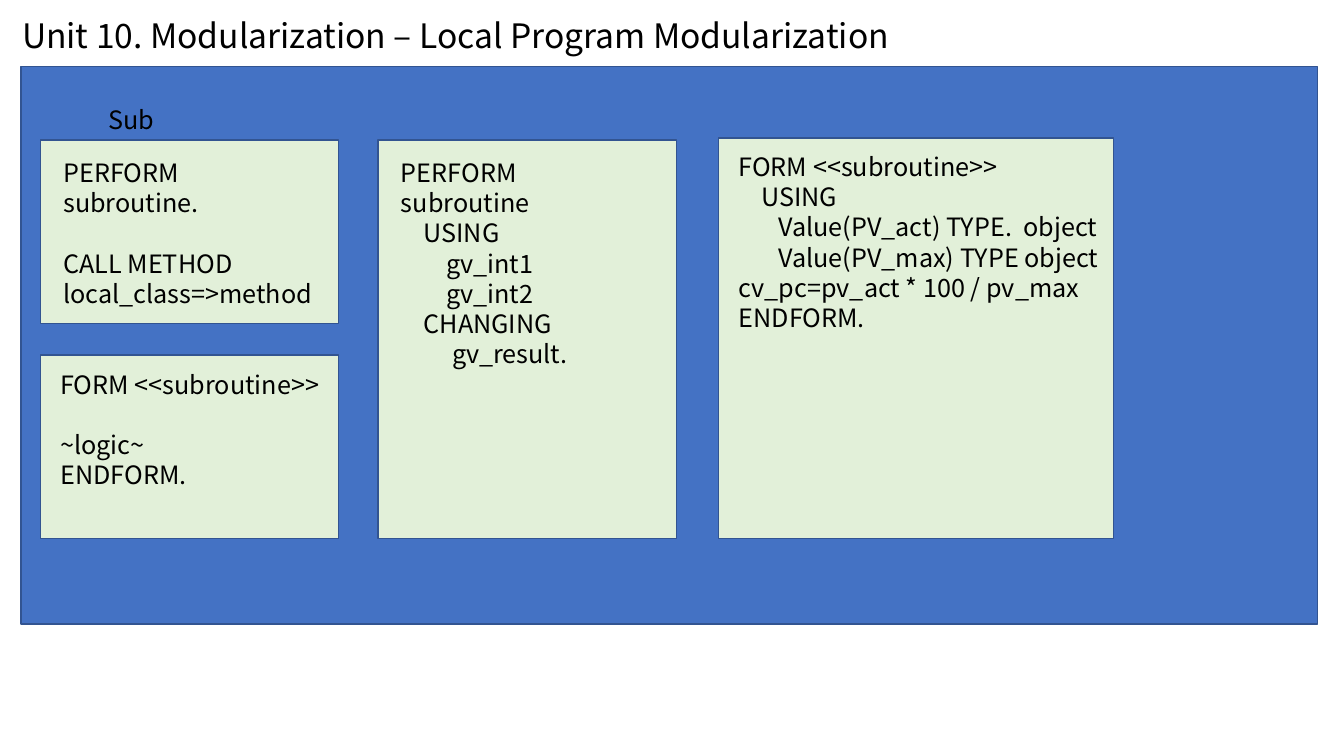
"""Build the slide on local program modularization with subroutines."""
from pptx import Presentation
from pptx.dml.color import RGBColor
from pptx.enum.shapes import MSO_SHAPE
from pptx.enum.text import MSO_ANCHOR as Anchor, MSO_AUTO_SIZE as AutoSize, PP_ALIGN as Align
from pptx.util import Pt

THEME = {
    "font": "Noto Sans CJK KR",
    "text": RGBColor.from_string("000000"),
    "panel": RGBColor.from_string("4472C4"),
    "card": RGBColor.from_string("E2F0D9"),
    "outline": RGBColor.from_string("325491"),
    "title_size": 24,
    "body_size": 18,
    "line_gap": 21.6,
    "indent_unit": 4.05,
}

TITLE = ("Unit 10. Modularization – Local Program Modularization", (8.64, 7.92, 702, 38.16))
PANEL = (15.12, 47.52, 925.92, 398.16)
LABEL = ("Sub", (38.16, 71.28, 110.88, 28.8))

CARDS = [
    {
        "frame": (28.8, 100.08, 213.12, 131.04),
        "inset": (9.36, 8.64),
        "text_size": (194.4, 94.32),
        "lines": [
            ("PERFORM subroutine.", 0, 0),
            ("CALL METHOD", 0, 1),
            ("local_class=>method", 0, 0),
        ],
    },
    {
        "frame": (28.8, 253.44, 213.12, 131.04),
        "inset": (7.2, 6.48),
        "text_size": (210.24, 94.32),
        "lines": [
            ("FORM <<subroutine>>", 0, 0),
            ("~logic~", 0, 1),
            ("ENDFORM.", 0, 0),
        ],
    },
    {
        "frame": (270, 100.08, 213.12, 284.4),
        "inset": (9.36, 8.64),
        "text_size": (190.08, 159.84),
        "lines": [
            ("PERFORM subroutine", 0, 0),
            ("USING", 4, 0),
            ("gv_int1", 8, 0),
            ("gv_int2", 8, 0),
            ("CHANGING", 4, 0),
            ("gv_result.", 9, 0),
        ],
    },
    {
        "frame": (513.36, 98.64, 282.24, 285.84),
        "inset": (7.2, 5.76),
        "text_size": (281.52, 138.24),
        "lines": [
            ("FORM <<subroutine>>", 0, 0),
            ("USING", 4, 0),
            ("Value(PV_act) TYPE.  object", 7, 0),
            ("Value(PV_max) TYPE object", 7, 0),
            ("cv_pc=pv_act * 100 / pv_max", 0, 0),
            ("ENDFORM.", 0, 0),
        ],
    },
]


def set_attributes(target, values):
    for name, value in values.items():
        setattr(target, name, value)


def add_box(slide, frame, fill):
    shape = slide.shapes.add_shape(MSO_SHAPE.RECTANGLE, *map(Pt, frame))
    shape.shadow.inherit = False
    shape.fill.solid()
    shape.fill.fore_color.rgb = THEME[fill]
    shape.line.color.rgb = THEME["outline"]
    shape.line.width = Pt(1)


def add_text(slide, frame, lines, size="body_size", anchor=Anchor.TOP, **paragraph_format):
    text_frame = slide.shapes.add_textbox(*map(Pt, frame)).text_frame
    set_attributes(text_frame, {
        "word_wrap": True, "auto_size": AutoSize.NONE, "vertical_anchor": anchor,
    })
    for index, (text, indent_units, blank_lines) in enumerate(lines):
        paragraph = text_frame.add_paragraph() if index else text_frame.paragraphs[0]
        set_attributes(paragraph, {
            "space_before": Pt(blank_lines * THEME["line_gap"]), **paragraph_format,
        })
        paragraph._p.get_or_add_pPr().set("marL", str(Pt(indent_units * THEME["indent_unit"])))
        run = paragraph.add_run()
        run.text = text
        set_attributes(run.font, {"name": THEME["font"], "size": Pt(THEME[size])})
        run.font.color.rgb = THEME["text"]


def main():
    presentation = Presentation()
    set_attributes(presentation, {"slide_width": Pt(960), "slide_height": Pt(540)})
    slide = presentation.slides.add_slide(presentation.slide_layouts[6])

    title, title_frame = TITLE
    add_text(slide, title_frame, [(title, 0, 0)], "title_size", Anchor.MIDDLE, line_spacing=0.9)
    add_box(slide, PANEL, "panel")
    label, label_frame = LABEL
    add_text(slide, label_frame, [(label, 0, 0)], alignment=Align.CENTER)

    for card in CARDS:
        left, top, _, _ = card["frame"]
        inset_x, inset_y = card["inset"]
        add_box(slide, card["frame"], "card")
        add_text(slide, (left + inset_x, top + inset_y, *card["text_size"]), card["lines"])

    presentation.save("out.pptx")


if __name__ == "__main__":
    main()
